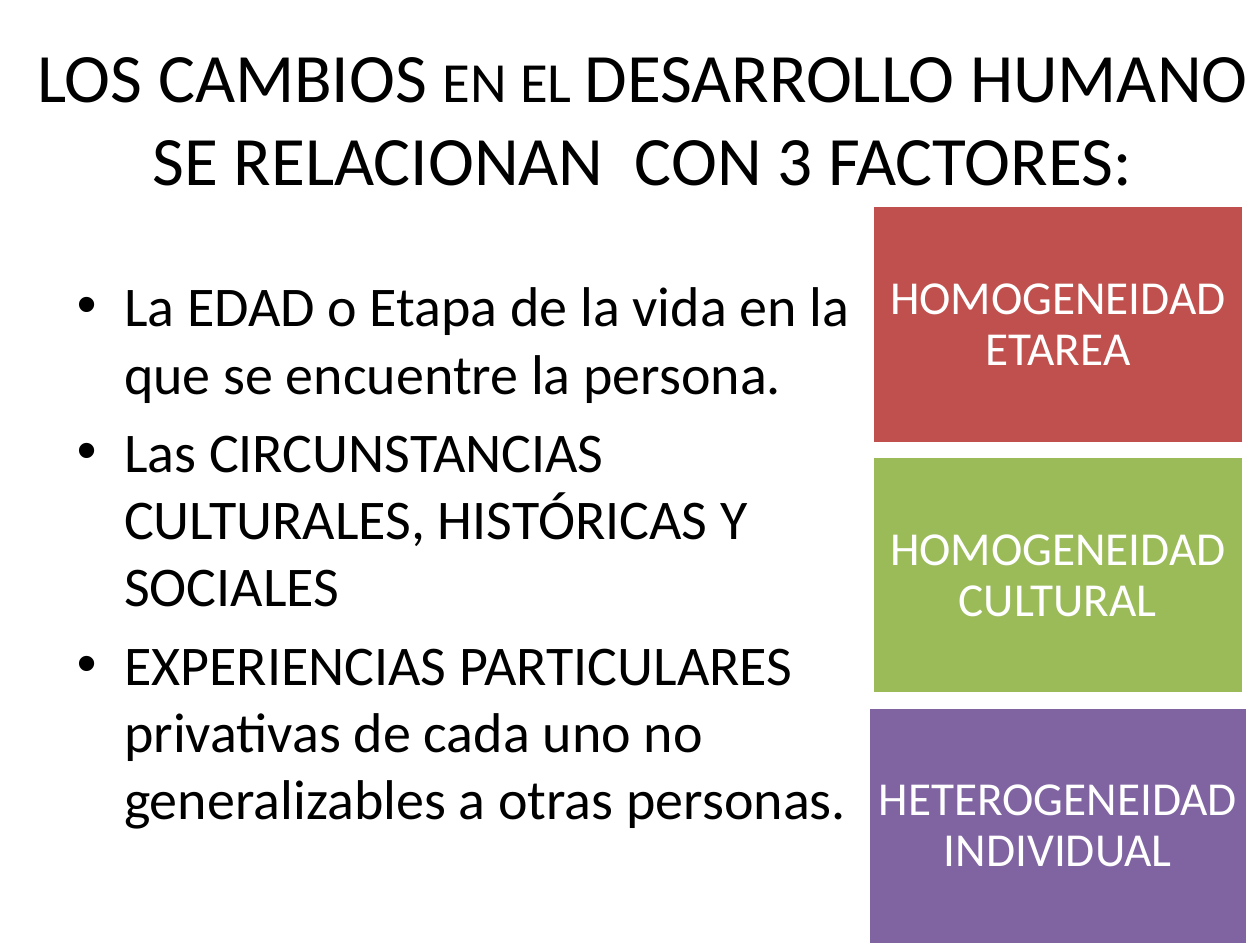
import dataclasses

import pptx
import pptx.dml.color
import pptx.enum.shapes
import pptx.enum.text
import pptx.util

EMU_PER_PX = 9144
FONT = "Calibri"
COLORS = {
    "text": "000000",
    "white": "FFFFFF",
    "age": "C0504D",
    "culture": "9BBB59",
    "individual": "8064A2",
}
FACTOR_TOP = 163
FACTOR_PITCH = 199
FACTOR_HEIGHT = 189
FACTOR_CENTER = 840
FACTOR_INSET = 7


@dataclasses.dataclass
class Factor:
    label: str
    color: str
    width: int


TITLE_SPANS = [
    ("LOS CAMBIOS ", 39.6),
    ("EN EL ", 32.4),
    ("DESARROLLO HUMANO SE RELACIONAN  CON 3 FACTORES:", 39.6),
]
BULLETS = [
    "La EDAD o Etapa de la vida en la que se encuentre la persona.",
    "Las CIRCUNSTANCIAS CULTURALES, HISTÓRICAS Y SOCIALES",
    "EXPERIENCIAS PARTICULARES privativas de cada uno no generalizables a otras personas.",
]
FACTORS = [
    Factor("HOMOGENEIDAD ETAREA", "age", 295),
    Factor("HOMOGENEIDAD CULTURAL", "culture", 295),
    Factor("HETEROGENEIDAD INDIVIDUAL", "individual", 301),
]


def px(length: int) -> pptx.util.Emu:
    return pptx.util.Emu(length * EMU_PER_PX)


def rgb(name: str) -> pptx.dml.color.RGBColor:
    return pptx.dml.color.RGBColor.from_string(COLORS[name])


def write(para, text: str, *, size: float, color: str = "text", align=None, spacing=None) -> None:
    span = para.add_run()
    span.text = text
    span.font.name = FONT
    span.font.size = pptx.util.Pt(size)
    span.font.color.rgb = rgb(color)
    if align is not None:
        para.alignment = align
    if spacing is not None:
        para.line_spacing = spacing


def place(box, left: int, top: int, width: int, height: int) -> None:
    box.left, box.top = px(left), px(top)
    box.width, box.height = px(width), px(height)
    box.text_frame.word_wrap = True
    box.text_frame.auto_size = pptx.enum.text.MSO_AUTO_SIZE.NONE


def draw_title(page) -> None:
    box = page.shapes.title
    place(box, 0, 30, 1020, 125)
    box.text_frame.vertical_anchor = pptx.enum.text.MSO_ANCHOR.MIDDLE
    for text, size in TITLE_SPANS:
        write(box.text_frame.paragraphs[0], text, size=size, align=pptx.enum.text.PP_ALIGN.CENTER)


def draw_bullets(page) -> None:
    box = page.placeholders[1]
    place(box, 51, 210, 647, 495)
    frame = box.text_frame
    for index, text in enumerate(BULLETS):
        para = frame.add_paragraph() if index else frame.paragraphs[0]
        write(para, text, size=32)


def draw_factor(page, factor: Factor, top: int) -> None:
    left = FACTOR_CENTER - (factor.width + 1) // 2
    box = page.shapes.add_shape(pptx.enum.shapes.MSO_SHAPE.RECTANGLE, 0, 0, 0, 0)
    place(box, left, top, factor.width, FACTOR_HEIGHT)
    box.shadow.inherit = False
    box.fill.solid()
    box.fill.fore_color.rgb = rgb(factor.color)
    box.line.color.rgb = rgb("white")
    box.line.width = pptx.util.Pt(2)
    frame = box.text_frame
    frame.margin_left = frame.margin_right = px(FACTOR_INSET)
    frame.margin_top = frame.margin_bottom = px(FACTOR_INSET)
    frame.vertical_anchor = pptx.enum.text.MSO_ANCHOR.MIDDLE
    write(
        frame.paragraphs[0],
        factor.label,
        size=27,
        color="white",
        align=pptx.enum.text.PP_ALIGN.CENTER,
        spacing=0.9,
    )


def main() -> None:
    deck = pptx.Presentation()
    deck.slide_width, deck.slide_height = px(1000), px(750)
    page = deck.slides.add_slide(deck.slide_layouts[1])
    draw_title(page)
    draw_bullets(page)
    for index, factor in enumerate(FACTORS):
        draw_factor(page, factor, FACTOR_TOP + index * FACTOR_PITCH)
    deck.save("out.pptx")


if __name__ == "__main__":
    main()
